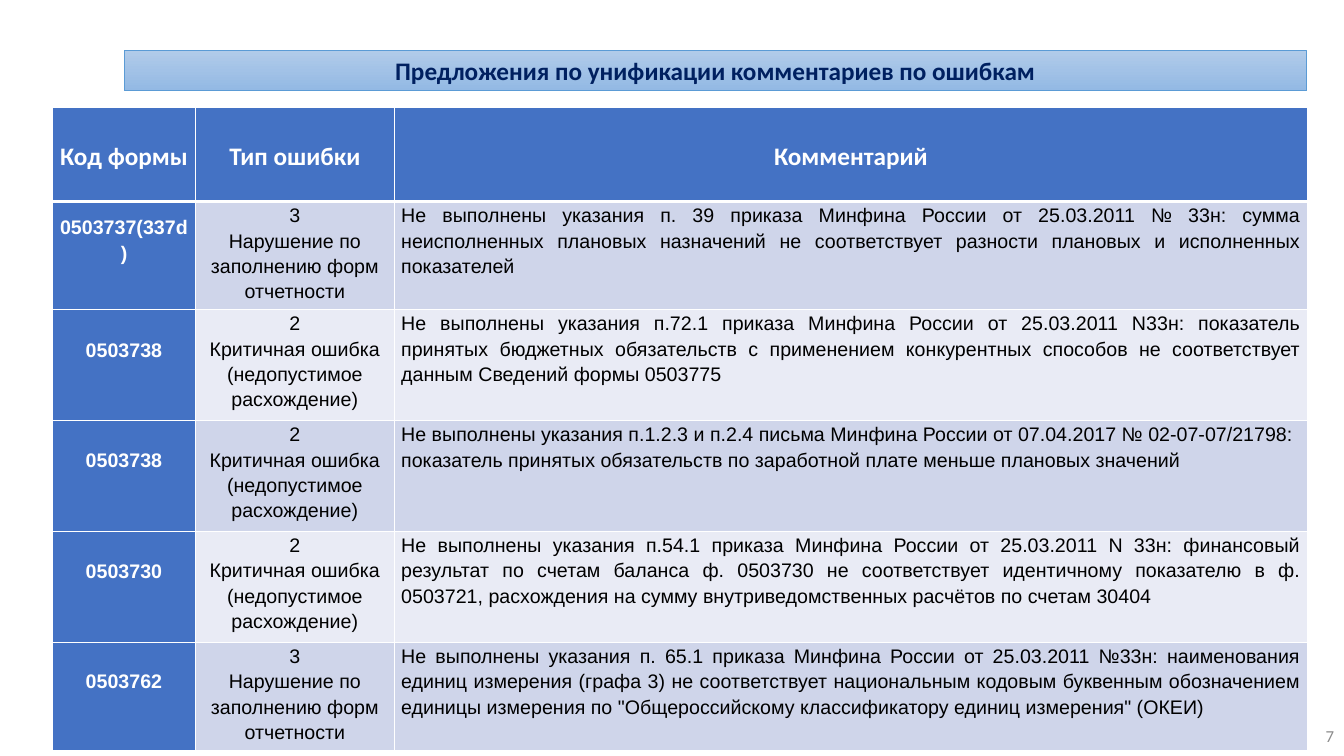
from lxml import etree
from pptx import Presentation
from pptx.dml.color import RGBColor
from pptx.enum.shapes import MSO_SHAPE
from pptx.enum.text import MSO_ANCHOR, PP_ALIGN
from pptx.oxml.ns import qn
from pptx.util import Inches, Pt

RECTANGLE = MSO_SHAPE.RECTANGLE
TOP, MIDDLE = MSO_ANCHOR.TOP, MSO_ANCHOR.MIDDLE
CENTER, RIGHT, JUSTIFY = PP_ALIGN.CENTER, PP_ALIGN.RIGHT, PP_ALIGN.JUSTIFY

WHITE = RGBColor(0xFF, 0xFF, 0xFF)
BLACK = RGBColor(0, 0, 0)
GRAY = RGBColor(0x8C, 0x8C, 0x8C)
NAVY = RGBColor(0x00, 0x20, 0x60)
BLUE = RGBColor(0x44, 0x72, 0xC4)
BANNER_TOP = RGBColor(0xB1, 0xCB, 0xE9)
BANNER_BOTTOM = RGBColor(0x93, 0xB9, 0xE4)
BANNER_LINE = RGBColor(0x5B, 0x9B, 0xD5)
BANDS = (RGBColor(0xCF, 0xD5, 0xEA), RGBColor(0xE9, 0xEB, 0xF5))

HEADERS = ("Код формы", "Тип ошибки", "Комментарий")
COLUMN_WIDTHS = (1.42, 1.97, 9.06)
ROW_HEIGHTS = (0.93, 0.93, 1.1, 1.1, 1.1, 1)
FILLING = ("3", "Нарушение по заполнению форм отчетности")
CRITICAL = ("2", "Критичная ошибка (недопустимое расхождение)")
ERRORS = (
    ("0503737(337d)", FILLING, (
        "Не выполнены указания п. 39 приказа Минфина России от 25.03.2011 № 33н: сумма "
        "неисполненных плановых назначений не соответствует разности плановых и "
        "исполненных показателей",)),
    ("0503738", CRITICAL, (
        "Не выполнены указания п.72.1 приказа Минфина России от 25.03.2011 N33н: показатель "
        "принятых бюджетных обязательств с применением конкурентных способов не "
        "соответствует данным Сведений формы 0503775",)),
    ("0503738", CRITICAL, (
        "Не выполнены указания п.1.2.3 и п.2.4 письма Минфина России от 07.04.2017 "
        "№ 02-07-07/21798:",
        "показатель принятых обязательств по заработной плате меньше плановых значений")),
    ("0503730", CRITICAL, (
        "Не выполнены указания п.54.1 приказа Минфина России от 25.03.2011 N 33н: финансовый "
        "результат по счетам баланса ф. 0503730 не соответствует идентичному показателю в "
        "ф. 0503721, расхождения на сумму внутриведомственных расчётов по счетам 30404",)),
    ("0503762", FILLING, (
        "Не выполнены указания п. 65.1 приказа Минфина России от 25.03.2011 №33н: наименования "
        "единиц измерения (графа 3) не соответствует национальным кодовым буквенным "
        "обозначением единицы измерения по \"Общероссийскому классификатору единиц "
        "измерения\" (ОКЕИ)",)),
)


class ErrorSlide:
    """Draws the banner, error table and page number on one slide."""

    def __init__(self, slide):
        self.slide = slide
        self.heading_font = "Calibri"
        self.body_font = "Arial"

    def set_text(self, frame, texts, font, size, color, bold, align, spacing=1.0):
        frame.word_wrap = True
        for index, text in enumerate(texts):
            paragraph = frame.paragraphs[0] if index == 0 else frame.add_paragraph()
            paragraph.text = text
            paragraph.alignment = align
            paragraph.line_spacing = spacing
            paragraph.font.name = font
            paragraph.font.size = Pt(size)
            paragraph.font.bold = bold
            paragraph.font.color.rgb = color

    def banner(self, left, top, width, height, text):
        shape = self.slide.shapes.add_shape(
            RECTANGLE, Inches(left), Inches(top), Inches(width), Inches(height))
        shape.shadow.inherit = False
        shape.fill.gradient()
        shape.fill.gradient_angle = 270
        for stop, color in zip(shape.fill.gradient_stops, (BANNER_TOP, BANNER_BOTTOM)):
            stop.color.rgb = color
        shape.line.color.rgb = BANNER_LINE
        shape.line.width = Pt(0.5)
        shape.text_frame.vertical_anchor = MIDDLE
        self.set_text(shape.text_frame, [text], self.heading_font, 18, NAVY, True, CENTER)

    def page_number(self, left, top, width, height, text):
        box = self.slide.shapes.add_textbox(
            Inches(left), Inches(top), Inches(width), Inches(height))
        box.text_frame.vertical_anchor = MIDDLE
        self.set_text(box.text_frame, [text], self.heading_font, 12, GRAY, False, RIGHT)

    def borders(self, cell, top, bottom):
        properties = cell._tc.get_or_add_tcPr()
        sides = (("a:lnL", 1), ("a:lnR", 1), ("a:lnT", top), ("a:lnB", bottom))
        for index, (tag, width) in enumerate(sides):
            line = etree.Element(qn(tag), w=str(Pt(width)))
            fill = etree.SubElement(line, qn("a:solidFill"))
            etree.SubElement(fill, qn("a:srgbClr"), val=str(WHITE))
            properties.insert(index, line)

    def cell(self, cell, texts, fill, font, size, color, bold, align, anchor,
             bottom_margin=0, top_border=1, bottom_border=1):
        cell.fill.solid()
        cell.fill.fore_color.rgb = fill
        cell.margin_left = cell.margin_right = Inches(0.07)
        cell.margin_top = 0
        cell.margin_bottom = Inches(bottom_margin)
        cell.vertical_anchor = anchor
        self.set_text(cell.text_frame, texts, font, size, color, bold, align, 1.15)
        self.borders(cell, top_border, bottom_border)

    def error_table(self, left, top):
        table = self.slide.shapes.add_table(
            len(ROW_HEIGHTS), len(COLUMN_WIDTHS), Inches(left), Inches(top),
            Inches(sum(COLUMN_WIDTHS)), Inches(sum(ROW_HEIGHTS))).table
        table.horz_banding = False
        for column, width in zip(table.columns, COLUMN_WIDTHS):
            column.width = Inches(width)
        for row, height in zip(table.rows, ROW_HEIGHTS):
            row.height = Inches(height)
        for column, header in enumerate(HEADERS):
            self.cell(table.cell(0, column), [header], BLUE, self.heading_font, 18,
                      WHITE, True, CENTER, MIDDLE, bottom_border=3)
        for row, (code, kind, comment) in enumerate(ERRORS, start=1):
            band = BANDS[(row - 1) % 2]
            top_border = 3 if row == 1 else 1
            self.cell(table.cell(row, 0), [code], BLUE, self.body_font, 14, WHITE,
                      True, CENTER, MIDDLE, 0.33, top_border)
            for column, texts, align in ((1, kind, CENTER), (2, comment, JUSTIFY)):
                self.cell(table.cell(row, column), texts, band, self.body_font, 14,
                          BLACK, False, align, TOP, top_border=top_border)


def main():
    presentation = Presentation()
    presentation.slide_width = Inches(13.33)
    presentation.slide_height = Inches(7.5)
    page = ErrorSlide(presentation.slides.add_slide(presentation.slide_layouts[6]))
    page.page_number(10.33, 7.1, 3, 0.4, "7")
    page.banner(1.23, 0.5, 11.73, 0.4, "Предложения по унификации комментариев по ошибкам")
    page.error_table(0.52, 1.07)
    presentation.save("out.pptx")


if __name__ == "__main__":
    main()
